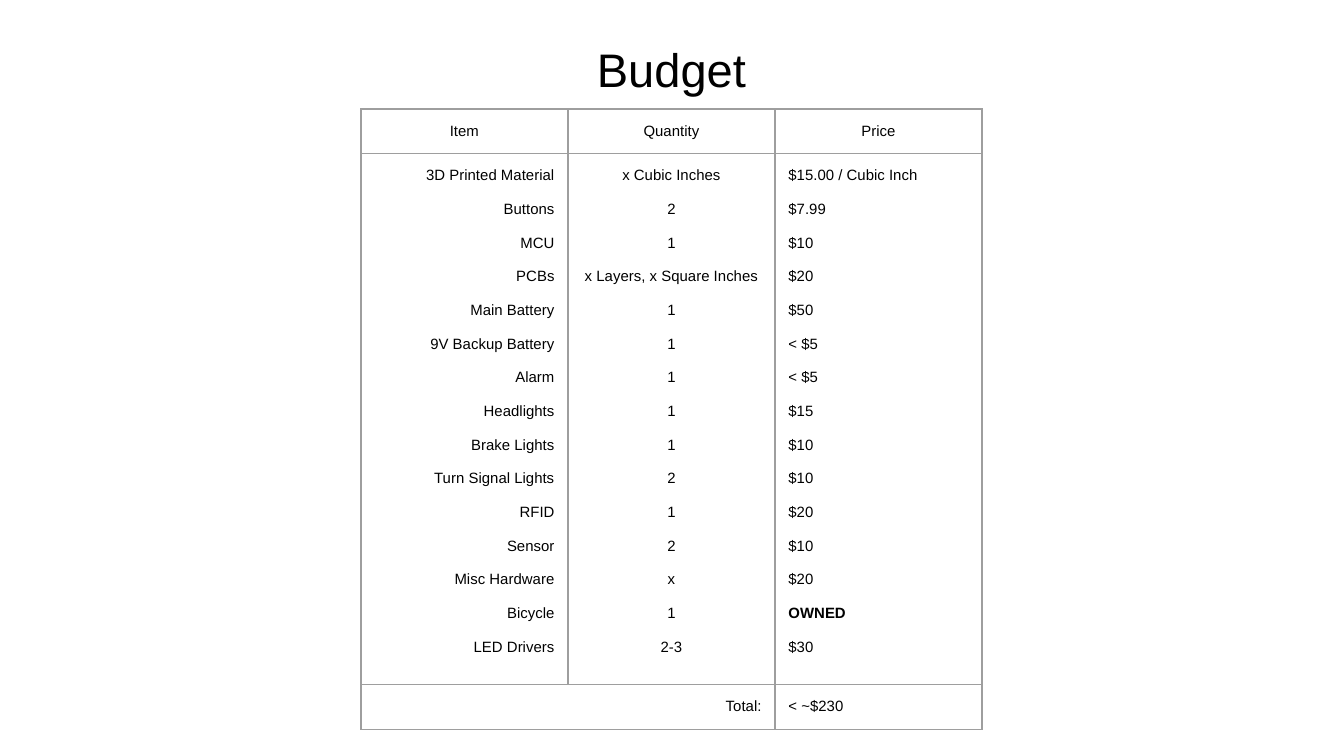
from lxml.etree import SubElement
from pptx import Presentation
from pptx.dml.color import RGBColor
from pptx.enum.text import MSO_ANCHOR, PP_ALIGN
from pptx.oxml.ns import qn
from pptx.util import Emu, Pt

SCALE = 914400 / 134.4
COLORS = {"text": "000000", "border": "9E9E9E", "page": "FFFFFF"}
ALIGNMENTS = [PP_ALIGN.RIGHT, PP_ALIGN.CENTER, PP_ALIGN.LEFT]
HEADINGS = ["Item", "Quantity", "Price"]
BUDGET = [
    ("3D Printed Material", "x Cubic Inches", "$15.00 / Cubic Inch"),
    ("Buttons", "2", "$7.99"),
    ("MCU", "1", "$10"),
    ("PCBs", "x Layers, x Square Inches", "$20"),
    ("Main Battery", "1", "$50"),
    ("9V Backup Battery", "1", "< $5"),
    ("Alarm", "1", "< $5"),
    ("Headlights", "1", "$15"),
    ("Brake Lights", "1", "$10"),
    ("Turn Signal Lights", "2", "$10"),
    ("RFID", "1", "$20"),
    ("Sensor", "2", "$10"),
    ("Misc Hardware", "x", "$20"),
    ("Bicycle", "1", "OWNED"),
    ("LED Drivers", "2-3", "$30"),
]


def px(length):
    """Convert pixels to EMU."""
    return Emu(round(length * SCALE))


class BudgetPage:
    """Hold the text style and the current slide."""

    def __init__(self, deck):
        """Add a blank page to the deck."""
        self.page = deck.slides.add_slide(deck.slide_layouts[6])
        self.page.background.fill.solid()
        self.page.background.fill.fore_color.rgb = RGBColor.from_string(COLORS["page"])
        self.font = {"name": "Arial", "size": Pt(8), "bold": False}

    def add_lines(self, frame, lines, alignment, **changes):
        """Add one spaced paragraph for each line."""
        for index, line in enumerate(lines):
            para = frame.add_paragraph() if index else frame.paragraphs[0]
            para.alignment = alignment
            para.space_before = Pt(9 if index else 0)
            span = para.add_run()
            span.text = line
            for name, value in {**self.font, **changes, "bold": line == "OWNED"}.items():
                setattr(span.font, name, value)
            span.font.color.rgb = RGBColor.from_string(COLORS["text"])

    def title(self, text, left, top, width, height):
        """Add the centred title."""
        frame = self.page.shapes.add_textbox(*map(px, (left, top, width, height))).text_frame
        margins = {f"margin_{side}": Pt(7.2) for side in ("left", "right", "top", "bottom")}
        for name, value in {**margins, "word_wrap": True, "vertical_anchor": MSO_ANCHOR.BOTTOM}.items():
            setattr(frame, name, value)
        self.add_lines(frame, [text], PP_ALIGN.CENTER, size=Pt(25.2))

    def table(self, left, top, column_width, row_heights):
        """Add an unbanded table with bordered cells."""
        columns = len(HEADINGS)
        box = self.page.shapes.add_table(len(row_heights), columns, *map(
            px, (left, top, column_width * columns, sum(row_heights))))
        table = box.table
        table.first_row = table.horz_banding = False
        for column in table.columns:
            column.width = px(column_width)
        for row, height in zip(table.rows, row_heights):
            row.height = px(height)
        for cell in table.iter_cells():
            self.style_cell(cell)
        return table

    def style_cell(self, cell):
        """Set the margins, borders and empty fill of a cell."""
        for side in ("left", "right", "top", "bottom"):
            setattr(cell, f"margin_{side}", Pt(7.2))
        properties = cell._tc.get_or_add_tcPr()
        for side in "LRTB":
            line = SubElement(properties, qn(f"a:ln{side}"), w=str(Pt(0.75)))
            fill = SubElement(line, qn("a:solidFill"))
            SubElement(fill, qn("a:srgbClr"), val=COLORS["border"])
        cell.fill.background()


def main():
    """Build and save the budget slide."""
    deck = Presentation()
    deck.slide_width, deck.slide_height = px(1344), px(756)
    page = BudgetPage(deck)
    page.title("Budget", 361, 26, 621, 84)
    table = page.table(361, 109, 207, [44, 514, 44])
    for column, (heading, lines, alignment) in enumerate(zip(HEADINGS, zip(*BUDGET), ALIGNMENTS)):
        page.add_lines(table.cell(0, column).text_frame, [heading], PP_ALIGN.CENTER)
        page.add_lines(table.cell(1, column).text_frame, lines, alignment)
    table.cell(2, 0).merge(table.cell(2, 1))
    page.add_lines(table.cell(2, 0).text_frame, ["Total:"], PP_ALIGN.RIGHT)
    page.add_lines(table.cell(2, 2).text_frame, ["< ~$230"], PP_ALIGN.LEFT)
    deck.save("out.pptx")


if __name__ == "__main__":
    main()
